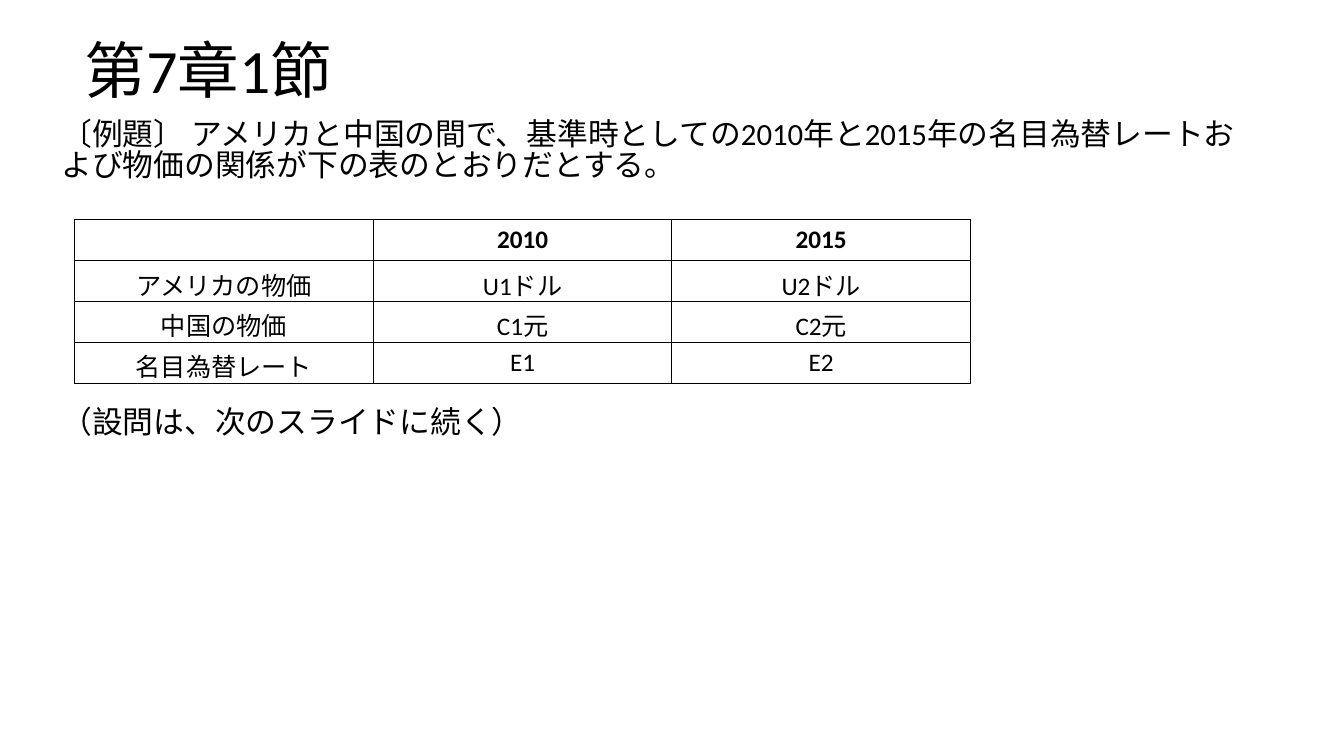
from pptx import Presentation
from pptx import util as u
from pptx.dml import color
from pptx.enum import text
from pptx.oxml import parse_xml
from pptx.oxml.ns import nsdecls

FONT = "Calibri"
INK = "000000"
PRICE_ROWS = [
    ["", "2010", "2015"],
    ["アメリカの物価", "U1ドル", "U2ドル"],
    ["中国の物価", "C1元", "C2元"],
    ["名目為替レート", "E1", "E2"],
]


def rgb(hex_code):
    """Turn a hex string into a colour."""
    return color.RGBColor.from_string(hex_code)


def add_run(paragraph, wording, size, bold=False):
    """Append one formatted run to a paragraph."""
    run = paragraph.add_run()
    run.text = wording
    run.font.name = FONT
    run.font.size = u.Pt(size)
    run.font.bold = bold
    run.font.color.rgb = rgb(INK)


def set_title(slide, wording):
    """Place and format the title placeholder."""
    heading = slide.shapes.title
    heading.left, heading.top = u.Cm(1.88), u.Cm(0.86)
    heading.width, heading.height = u.Cm(29.51), u.Cm(2.01)
    frame = heading.text_frame
    frame.vertical_anchor = text.MSO_ANCHOR.MIDDLE
    paragraph = frame.paragraphs[0]
    paragraph.alignment = text.PP_ALIGN.LEFT
    paragraph.line_spacing = 0.9
    add_run(paragraph, wording, 44)


def add_body(slide, passages):
    """Add the body text from pairs of wording and space before in points."""
    body = slide.shapes.add_textbox(u.Cm(1.3), u.Cm(2.9), u.Cm(30.73), u.Cm(15.09))
    frame = body.text_frame
    frame.word_wrap = True
    for index, (wording, gap) in enumerate(passages):
        paragraph = frame.add_paragraph() if index else frame.paragraphs[0]
        paragraph.space_before = u.Pt(gap)
        paragraph.line_spacing = 0.85
        add_run(paragraph, wording, 22)


def outline_cell(cell):
    """Draw a thin solid border on all four sides of a cell."""
    properties = cell._tc.get_or_add_tcPr()
    for position, side in enumerate(("lnL", "lnR", "lnT", "lnB")):
        border = parse_xml(
            f'<a:{side} {nsdecls("a")} w="{u.Pt(1)}"><a:solidFill>'
            f'<a:srgbClr val="{INK}"/></a:solidFill></a:{side}>'
        )
        properties.insert(position, border)


def add_price_table(slide, rows):
    """Add the table of prices and exchange rates."""
    frame = slide.shapes.add_table(
        len(rows), len(rows[0]), u.Cm(1.88), u.Cm(5.54), u.Cm(22.58), u.Cm(4.12)
    )
    for row_index, row in enumerate(rows):
        for column_index, wording in enumerate(row):
            cell = frame.table.cell(row_index, column_index)
            cell.fill.background()
            outline_cell(cell)
            paragraph = cell.text_frame.paragraphs[0]
            paragraph.alignment = text.PP_ALIGN.CENTER
            paragraph.font.size = u.Pt(18)
            if wording:
                add_run(paragraph, wording, 18, bold=row_index == 0)


def main():
    """Build and save the slide."""
    deck = Presentation()
    deck.slide_width, deck.slide_height = u.Cm(33.87), u.Cm(19.05)
    slide = deck.slides.add_slide(deck.slide_layouts[5])
    add_body(slide, [
        ("〔例題〕 アメリカと中国の間で、基準時としての2010年と2015年の"
         "名目為替レートおよび物価の関係が下の表のとおりだとする。", 5),
        ("（設問は、次のスライドに続く）", 161),
    ])
    set_title(slide, "第7章1節")
    add_price_table(slide, PRICE_ROWS)
    deck.save("out.pptx")


if __name__ == "__main__":
    main()
